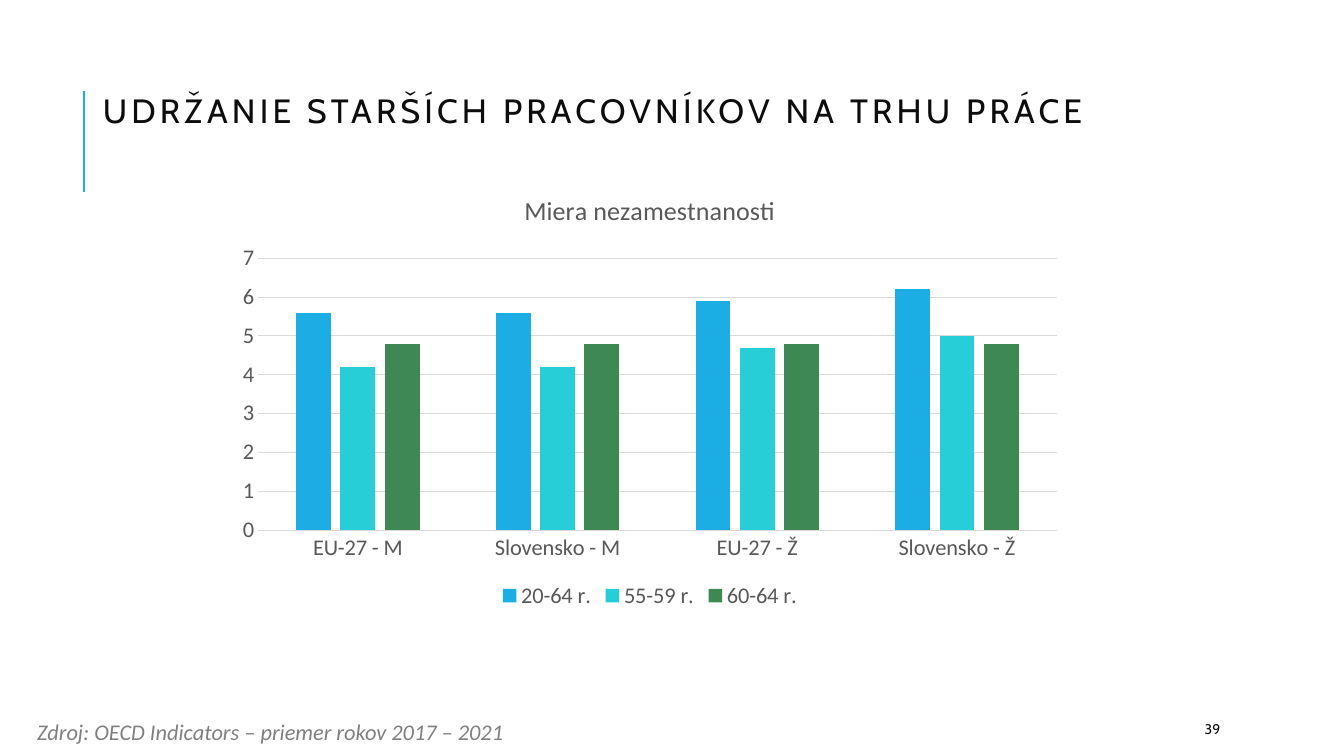
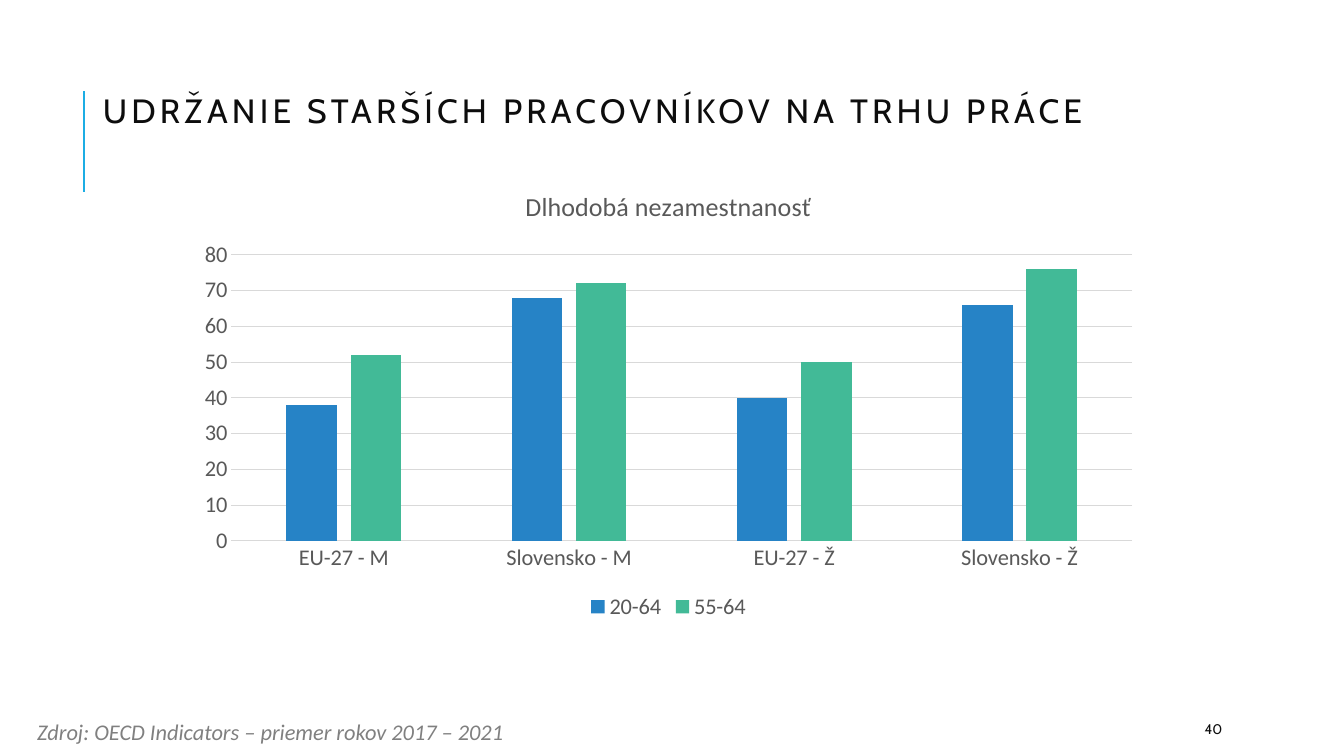
from dataclasses import dataclass

from lxml.etree import SubElement
from pptx import Presentation
from pptx.chart.data import CategoryChartData
from pptx.dml.color import RGBColor
from pptx.enum.chart import XL_CHART_TYPE, XL_LEGEND_POSITION, XL_TICK_MARK
from pptx.enum.shapes import MSO_CONNECTOR
from pptx.enum.text import MSO_ANCHOR, MSO_AUTO_SIZE, PP_ALIGN
from pptx.oxml.ns import qn
from pptx.util import Inches, Pt


@dataclass(frozen=True)
class Theme:
    heading_font: str = "Cabin"
    body_font: str = "Calibri"
    ink: str = "0D0D0D"
    accent: str = "1CADE4"
    source_grey: str = "808080"
    chart_grey: str = "595959"
    grid_grey: str = "D9D9D9"
    title_size: float = 24
    title_spacing: float = 3
    chart_title_size: float = 18.6
    body_size: float = 16
    number_size: float = 10
    accent_width: float = 1.5
    grid_width: float = 0.75


THEME = Theme()
TITLE = "UDRŽANIE STARŠÍCH PRACOVNÍKOV NA TRHU PRÁCE"
SOURCE = "Zdroj: OECD Indicators – priemer rokov 2017 – 2021"
GROUPS = ["EU-27 - M", "Slovensko - M", "EU-27 - Ž", "Slovensko - Ž"]
FIRST_NUMBER = 39

CHARTS = [
    {
        "heading": "Miera nezamestnanosti",
        "box": (2.24, 1.72, 8.41, 4.37),
        "top": 7,
        "step": 1,
        "series": [
            ("20-64 r.", [5.6, 5.6, 5.9, 6.2], "1CADE4"),
            ("55-59 r.", [4.2, 4.2, 4.7, 5], "27CED7"),
            ("60-64 r.", [4.8, 4.8, 4.8, 4.8], "3E8853"),
        ],
    },
    {
        "heading": "Dlhodobá nezamestnanosť",
        "box": (1.84, 1.68, 9.58, 4.52),
        "top": 80,
        "step": 10,
        "series": [
            ("20-64", [38, 68, 40, 66], "2683C6"),
            ("55-64", [52, 72, 50, 76], "42BA97"),
        ],
    },
]


def color(value):
    return RGBColor.from_string(value)


def inches(box):
    return [Inches(length) for length in box]


def set_font(font, name, size, tint, italic=False):
    font.name = name
    font.size = Pt(size)
    font.bold = False
    font.italic = italic
    font.color.rgb = color(tint)


def set_line(line, tint, width):
    line.color.rgb = color(tint)
    line.width = Pt(width)


def add_accent(slide):
    accent = slide.shapes.add_connector(
        MSO_CONNECTOR.STRAIGHT, *inches((0.83, 1.9, 0.83, 0.9)))
    set_line(accent.line, THEME.accent, THEME.accent_width)
    SubElement(accent.line._get_or_add_ln().getparent(), qn("a:effectLst"))


def set_title(slide):
    title = slide.shapes.title
    title.left, title.top, title.width, title.height = inches((0.92, 0.92, 11.46, 0.61))
    frame = title.text_frame
    frame.text = TITLE
    frame.word_wrap = True
    frame.auto_size = MSO_AUTO_SIZE.NONE
    frame.vertical_anchor = MSO_ANCHOR.TOP
    paragraph = frame.paragraphs[0]
    paragraph.alignment = PP_ALIGN.LEFT
    paragraph.line_spacing = 0.8
    set_font(paragraph.font, THEME.heading_font, THEME.title_size, THEME.ink)
    letters = paragraph._p.pPr.find(qn("a:defRPr"))
    letters.set("spc", str(THEME.title_spacing * 100))


def add_label(slide, text, box, name, size, tint, anchor=MSO_ANCHOR.TOP, italic=False):
    frame = slide.shapes.add_textbox(*inches(box)).text_frame
    frame.text = text
    frame.word_wrap = True
    frame.vertical_anchor = anchor
    set_font(frame.paragraphs[0].font, name, size, tint, italic)


def style_axes(chart, top, step):
    for axis in (chart.category_axis, chart.value_axis):
        axis.major_tick_mark = XL_TICK_MARK.NONE
        axis.minor_tick_mark = XL_TICK_MARK.NONE
        set_font(axis.tick_labels.font, THEME.body_font, THEME.body_size, THEME.chart_grey)
    set_line(chart.category_axis.format.line, THEME.grid_grey, THEME.grid_width)
    values = chart.value_axis
    values.minimum_scale = 0
    values.maximum_scale = top
    values.major_unit = step
    values.format.line.fill.background()
    values.has_major_gridlines = True
    set_line(values.major_gridlines.format.line, THEME.grid_grey, THEME.grid_width)


def add_columns(slide, heading, box, top, step, series):
    data = CategoryChartData()
    data.categories = GROUPS
    for age, rates, _ in series:
        data.add_series(age, rates)
    chart = slide.shapes.add_chart(
        XL_CHART_TYPE.COLUMN_CLUSTERED, *inches(box), data).chart
    set_font(chart.font, THEME.body_font, THEME.body_size, THEME.chart_grey)

    chart.has_title = True
    chart.chart_title.include_in_layout = False
    chart.chart_title.text_frame.text = heading
    set_font(chart.chart_title.text_frame.paragraphs[0].font,
             THEME.body_font, THEME.chart_title_size, THEME.chart_grey)

    chart.has_legend = True
    chart.legend.position = XL_LEGEND_POSITION.BOTTOM
    chart.legend.include_in_layout = False
    set_font(chart.legend.font, THEME.body_font, THEME.body_size, THEME.chart_grey)

    style_axes(chart, top, step)
    plot = chart.plots[0]
    plot.vary_by_categories = False
    plot.gap_width = 219
    plot.overlap = -27
    for columns, (_, _, tint) in zip(plot.series, series):
        columns.format.fill.solid()
        columns.format.fill.fore_color.rgb = color(tint)


def add_chart_slide(deck, number, content):
    slide = deck.slides.add_slide(deck.slide_layouts.get_by_name("Title Only"))
    add_accent(slide)
    set_title(slide)
    add_label(slide, str(number), (11.85, 7.08, 1.06, 0.3), THEME.heading_font,
              THEME.number_size, THEME.ink, anchor=MSO_ANCHOR.MIDDLE)
    add_label(slide, SOURCE, (0.27, 7.08, 5.08, 0.37), THEME.body_font,
              THEME.body_size, THEME.source_grey, italic=True)
    add_columns(slide, **content)


def main():
    deck = Presentation()
    deck.slide_width, deck.slide_height = inches((13.33, 7.5))
    for number, content in enumerate(CHARTS, FIRST_NUMBER):
        add_chart_slide(deck, number, content)
    deck.save("out.pptx")


if __name__ == "__main__":
    main()
